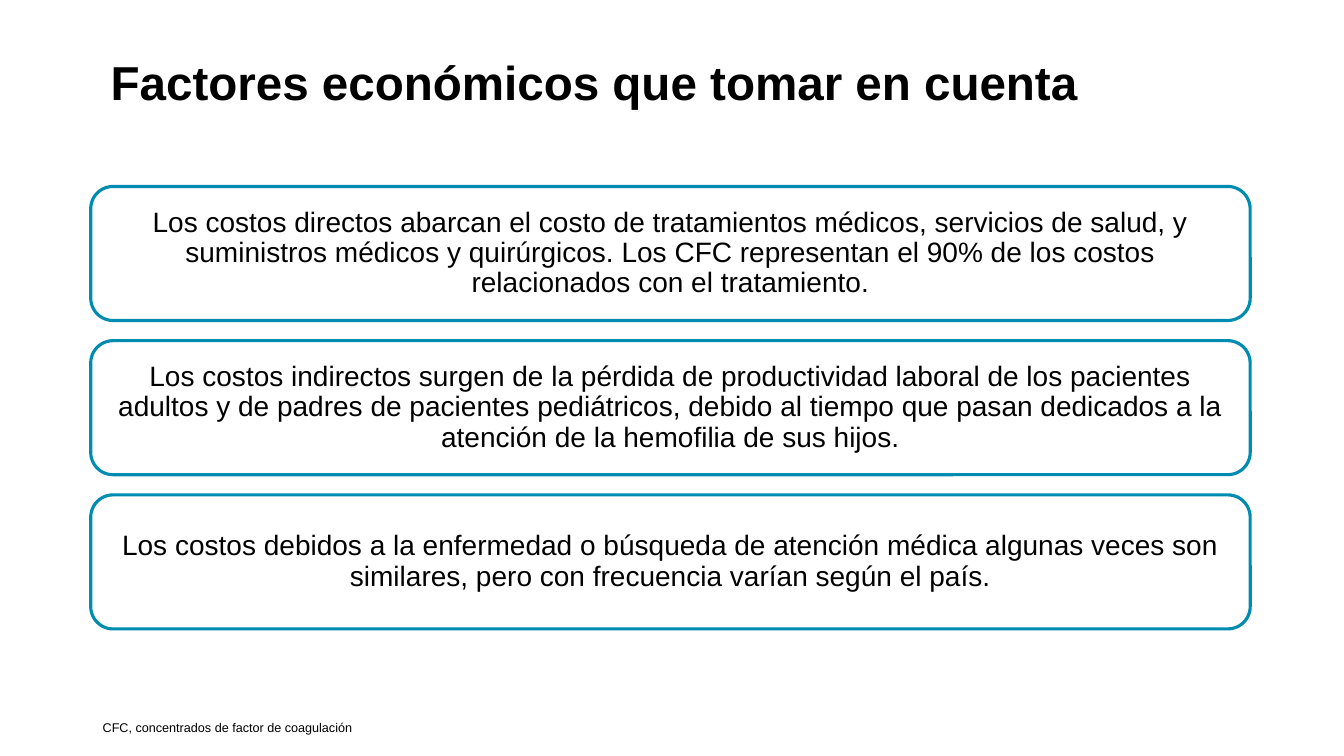
from dataclasses import dataclass

from pptx import Presentation
from pptx.dml.color import RGBColor as Color
from pptx.enum.shapes import MSO_SHAPE as Shape
from pptx.enum.text import MSO_ANCHOR as Anchor, PP_ALIGN as Align
from pptx.util import Emu, Pt

PX = 9144


@dataclass(frozen=True)
class Theme:
    """Colours, font and type sizes of the deck."""
    font: str = "Arial"
    ink: str = "000000"
    paper: str = "FFFFFF"
    accent: str = "008BB0"
    title: int = 34
    body: int = 20
    note: int = 9
    border: float = 2.25


THEME = Theme()
TITLE = "Factores económicos que tomar en cuenta"
COSTS = [
    "Los costos directos abarcan el costo de tratamientos médicos, servicios de salud, y "
    "suministros médicos y quirúrgicos. Los CFC representan el 90% de los costos "
    "relacionados con el tratamiento.",
    "Los costos indirectos surgen de la pérdida de productividad laboral de los pacientes "
    "adultos y de padres de pacientes pediátricos, debido al tiempo que pasan dedicados a la "
    "atención de la hemofilia de sus hijos.",
    "Los costos debidos a la enfermedad o búsqueda de atención médica algunas veces son "
    "similares, pero con frecuencia varían según el país.",
]
NOTE = "CFC, concentrados de factor de coagulación"


def px(*lengths):
    """Turn px lengths into EMU."""
    return [Emu(length * PX) for length in lengths]


def write(shape, text, size, bold=False, align=Align.LEFT, anchor=Anchor.TOP,
          spacing=1.0, inset=(10, 5)):
    """Put one formatted paragraph into a shape."""
    frame = shape.text_frame
    frame.word_wrap = True
    frame.vertical_anchor = anchor
    side, edge = px(*inset)
    frame.margin_left = frame.margin_right = side
    frame.margin_top = frame.margin_bottom = edge
    para = frame.paragraphs[0]
    para.alignment = align
    para.line_spacing = spacing
    span = para.add_run()
    span.text = text
    span.font.name = THEME.font
    span.font.size = Pt(size)
    span.font.bold = bold
    span.font.color.rgb = Color.from_string(THEME.ink)


def add_title(page, box, text):
    """Place the slide heading."""
    write(page.shapes.add_textbox(*px(*box)), text, THEME.title,
          bold=True, anchor=Anchor.MIDDLE, spacing=0.9)


def add_cost_cards(page, box, texts, gap):
    """Stack equal rounded cards down the box."""
    left, top, width, height = box
    card_height = (height - gap * (len(texts) - 1)) // len(texts)
    for row, text in enumerate(texts):
        card_top = top + row * (card_height + gap)
        card = page.shapes.add_shape(Shape.ROUNDED_RECTANGLE,
                                     *px(left, card_top, width, card_height))
        card.shadow.inherit = False
        card.fill.solid()
        card.fill.fore_color.rgb = Color.from_string(THEME.paper)
        card.line.color.rgb = Color.from_string(THEME.accent)
        card.line.width = Pt(THEME.border)
        write(card, text, THEME.body, align=Align.CENTER, anchor=Anchor.MIDDLE,
              spacing=0.9, inset=(8, 8))


def add_note(page, box, text):
    """Place the abbreviation note at the foot."""
    write(page.shapes.add_textbox(*px(*box)), text, THEME.note)


def main():
    """Build and save the deck."""
    deck = Presentation()
    deck.slide_width, deck.slide_height = px(1333, 750)
    page = deck.slides.add_slide(deck.slide_layouts[6])
    add_title(page, (100, 25, 1150, 119), TITLE)
    add_cost_cards(page, (90, 185, 1150, 440), COSTS, gap=20)
    add_note(page, (92, 709, 1085, 26), NOTE)
    deck.save("out.pptx")


if __name__ == "__main__":
    main()
